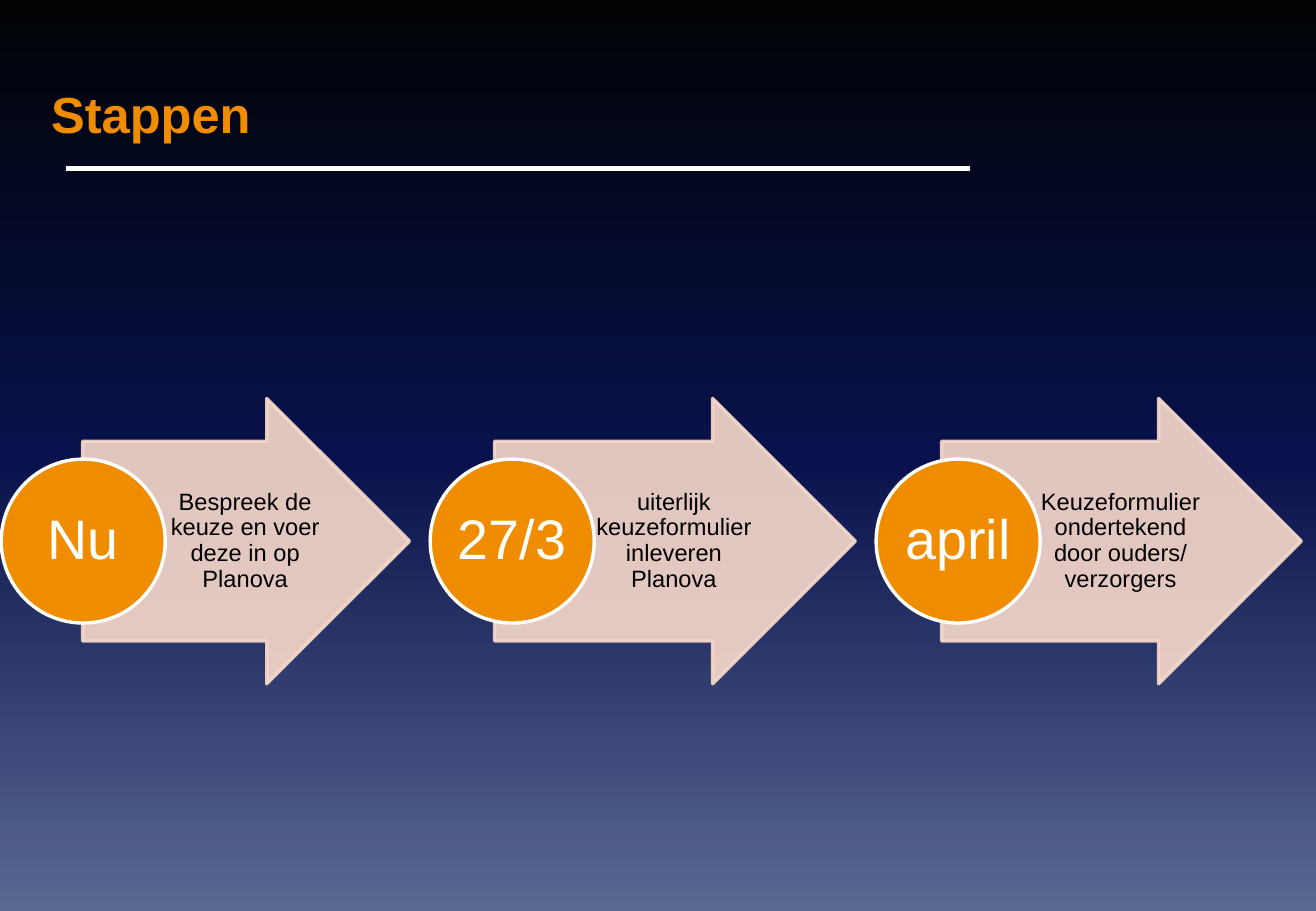
from copy import deepcopy

from lxml.etree import SubElement
from pptx import Presentation
from pptx.dml.color import RGBColor
from pptx.enum.shapes import MSO_CONNECTOR, MSO_SHAPE
from pptx.enum.text import MSO_ANCHOR, MSO_AUTO_SIZE, PP_ALIGN
from pptx.oxml.ns import qn
from pptx.util import Inches, Pt

FONT = "Arial"
COLORS = {
    "orange": "F08C00",
    "peach": "F9DACC",
    "white": "FFFFFF",
    "black": "000000",
}
BACKGROUND_STOPS = [(0, "010305"), (0.5, "08114B"), (1, "5A6992")]

# circle left, arrow left, arrow width, moment, task
STEPS = [
    (0.01, 0.68, 2.69, "Nu", "Bespreek de keuze en voer deze in op Planova"),
    (3.54, 4.07, 2.97, "27/3", "uiterlijk keuzeformulier inleveren Planova"),
    (7.21, 7.75, 2.96, "april", "Keuzeformulier ondertekend door ouders/ verzorgers"),
]
ARROW_TOP, ARROW_HEIGHT = 3.28, 2.35
CIRCLE_SIZE = 1.35
MIDDLE = ARROW_TOP + ARROW_HEIGHT / 2


def color(name):
    return RGBColor.from_string(COLORS[name])


def set_background(page):
    fill = page.background.fill
    fill.gradient()
    fill.gradient_angle = 270
    stop_list = page.element.find(".//" + qn("a:gsLst"))
    stop_list.insert(1, deepcopy(stop_list[0]))
    for stop, (position, value) in zip(fill.gradient_stops, BACKGROUND_STOPS):
        stop.position = position
        stop.color.rgb = RGBColor.from_string(value)


def write(box, text, size, color_name, margins, align=PP_ALIGN.CENTER, bold=False):
    """Fill a shape with one vertically centred paragraph."""
    frame = box.text_frame
    frame.word_wrap = True
    frame.auto_size = MSO_AUTO_SIZE.NONE
    frame.vertical_anchor = MSO_ANCHOR.MIDDLE
    (frame.margin_left, frame.margin_top,
     frame.margin_right, frame.margin_bottom) = [Inches(m) for m in margins]
    para = frame.paragraphs[0]
    para.alignment = align
    para.line_spacing = 0.9
    span = para.add_run()
    span.text = text
    span.font.name = FONT
    span.font.size = Pt(size)
    span.font.bold = bold
    span.font.color.rgb = color(color_name)


def add_title(page, text):
    title = page.shapes.title
    title.left, title.top = Inches(0.42), Inches(0.55)
    title.width, title.height = Inches(7.43), Inches(0.77)
    write(title, text, 30, "orange", (0, 0.05, 0, 0.05), PP_ALIGN.LEFT, True)
    title.text_frame.paragraphs[0].line_spacing = 1.0


def add_rule(page):
    rule = page.shapes.add_connector(
        MSO_CONNECTOR.STRAIGHT, Inches(0.54), Inches(1.39), Inches(7.98), Inches(1.39))
    rule.line.color.rgb = color("white")
    rule.line.width = Pt(3)
    SubElement(rule.element.spPr, qn("a:effectLst"))


def add_filled_shape(page, kind, left, top, width, height, fill_name, line_name):
    shape = page.shapes.add_shape(
        kind, Inches(left), Inches(top), Inches(width), Inches(height))
    shape.shadow.inherit = False
    shape.fill.solid()
    shape.fill.fore_color.rgb = color(fill_name)
    shape.line.color.rgb = color(line_name)
    shape.line.width = Pt(2)
    return shape


def add_arrow(page, left, width):
    arrow = add_filled_shape(page, MSO_SHAPE.RIGHT_ARROW, left, ARROW_TOP,
                             width, ARROW_HEIGHT, "peach", "peach")
    arrow.adjustments[0], arrow.adjustments[1] = 0.7, 0.5
    for value in arrow.element.spPr.iter(qn("a:srgbClr")):
        SubElement(value, qn("a:alpha"), val="90000")


def add_task(page, arrow_left, arrow_width, text):
    """Place the task text over the shaft, right of the circle."""
    height = 0.7 * ARROW_HEIGHT
    box = page.shapes.add_textbox(
        Inches(arrow_left + 0.25 * arrow_width), Inches(MIDDLE - height / 2),
        Inches(0.4875 * arrow_width), Inches(height))
    write(box, text, 14, "black", (0.04, 0.01, 0.02, 0.01))


def add_circle(page, left, text):
    circle = add_filled_shape(page, MSO_SHAPE.OVAL, left, MIDDLE - CIRCLE_SIZE / 2,
                              CIRCLE_SIZE, CIRCLE_SIZE, "orange", "white")
    write(circle, text, 33, "white", (0.02, 0.02, 0.02, 0.02))


def main():
    deck = Presentation()
    deck.slide_width, deck.slide_height = Inches(10.83), Inches(7.5)
    page = deck.slides.add_slide(deck.slide_layouts.get_by_name("Title Only"))
    set_background(page)
    add_rule(page)
    add_title(page, "Stappen")
    for circle_left, arrow_left, arrow_width, moment, task in STEPS:
        add_arrow(page, arrow_left, arrow_width)
        add_task(page, arrow_left, arrow_width, task)
        add_circle(page, circle_left, moment)
    deck.save("out.pptx")


if __name__ == "__main__":
    main()
